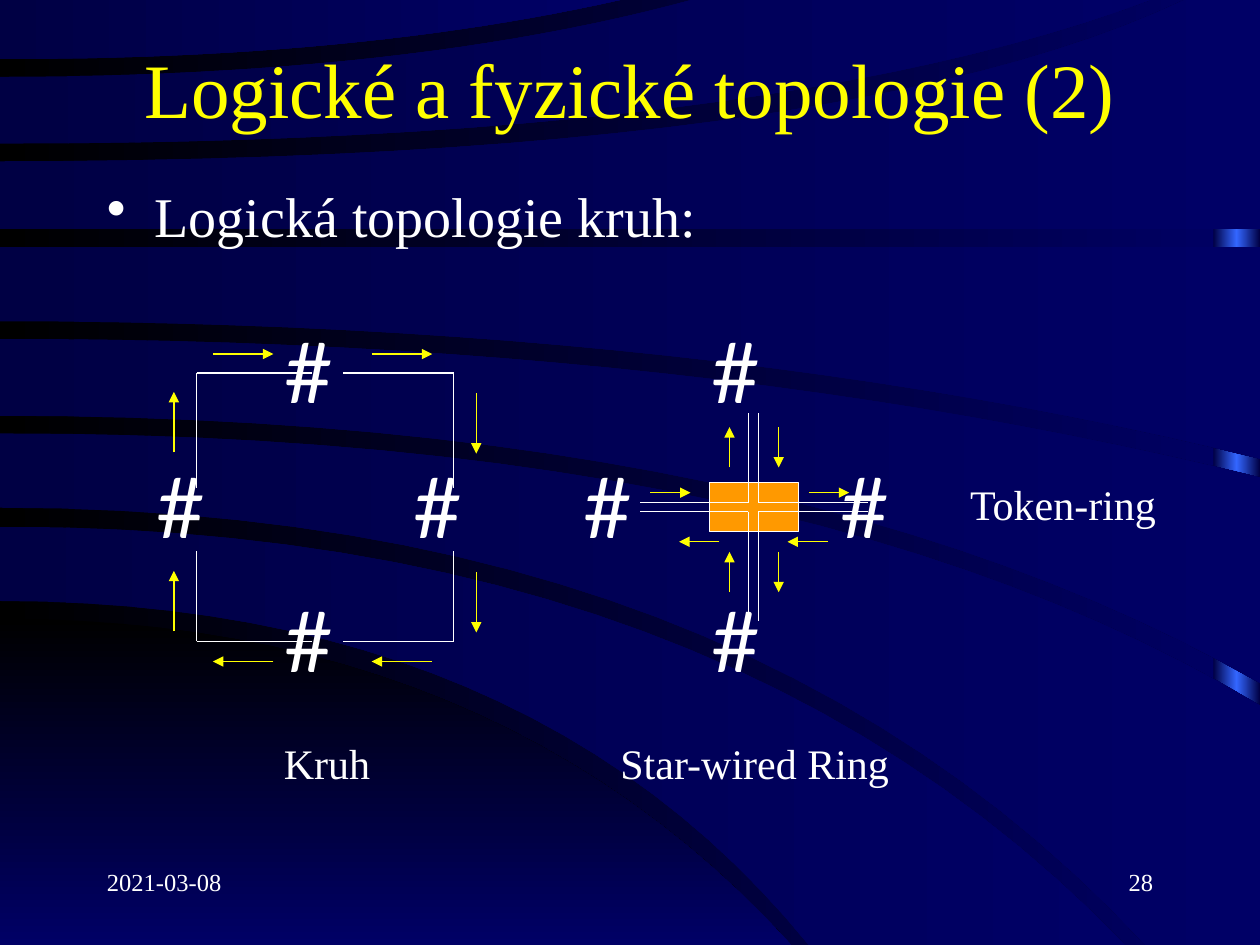
from copy import deepcopy
from dataclasses import dataclass
from itertools import product
from typing import NamedTuple

from lxml import etree
from pptx import Presentation
from pptx.dml.color import RGBColor
from pptx.enum import shapes as sh, text as tx
from pptx.oxml.ns import qn
from pptx.util import Inches, Pt


@dataclass(frozen=True)
class Theme:
    black: str = "000000"
    navy: str = "000044"
    blue: str = "000066"
    glow: str = "3366FF"
    white: str = "FFFFFF"
    yellow: str = "FFFF00"
    orange: str = "FF9900"
    serif: str = "Times New Roman"
    sans: str = "Lato"
    title: int = 44
    body: int = 32
    node: int = 48
    label: int = 24
    foot: int = 14
    line: float = 0.75


T = Theme()
WIDE, HIGH = 10, 7.5


class Box(NamedTuple):
    x: float
    y: float
    w: float
    h: float


class Label(NamedTuple):
    text: str
    box: Box
    size: int
    align: str = "LEFT"
    font: str = T.serif


class Arrow(NamedTuple):
    x: float
    y: float
    dx: float
    dy: float


class Edge(NamedTuple):
    """A curve that leaves the left side level at start and bends to (x, y)."""
    start: float
    bend: float
    x: float
    y: float

    def trace(self, steps: int = 24) -> list:
        spots = [i / steps for i in range(steps + 1)]
        return [(2 * t * (1 - t) * self.bend + t * t * self.x,
                 self.start + t * t * (self.y - self.start)) for t in spots]


class Band(NamedTuple):
    upper: Edge
    lower: Edge
    corner: tuple = ()
    ends: tuple = (T.navy, T.blue)
    angle: int = 0


def flat(y: float, x: float = WIDE) -> Edge:
    return Edge(y, x / 2, x, y)


# Background bands, from back to front
BANDS = [
    Band(Edge(4.91, 3.93, 6.28, HIGH), flat(HIGH, 6.28), ends=(T.black, T.blue), angle=270),
    Band(Edge(4.18, 5.74, 8.93, HIGH), Edge(4.77, 4.2, 6.42, HIGH)),
    Band(Edge(3.44, 6.4, WIDE, 5.6), Edge(4.03, 5.88, 9.09, HIGH), ((WIDE, HIGH),)),
    Band(Edge(2.69, 5.54, WIDE, 3.79), Edge(3.3, 6.28, WIDE, 5.42)),
    Band(flat(1.96), Edge(2.55, 5.6, WIDE, 3.64)),
    Band(Edge(1.28, 6.7, 9.4, 0), flat(1.82), ((WIDE, 0),)),
    Band(Edge(0.61, 3.25, 5.49, 0), Edge(1.14, 6.1, 9.13, 0)),
    Band(flat(0, 4.92), Edge(0.47, 2.84, 4.92, 0)),
]

LABELS = [
    Label("2021-03-08", Box(0.75, 6.83, 2.08, 0.5), T.foot),
    Label("28", Box(7.17, 6.83, 2.08, 0.5), T.foot, "RIGHT"),
    Label("Token-ring", Box(7.6, 3.75, 1.81, 0.55), T.label),
    Label("Kruh", Box(1.69, 5.8, 1.81, 0.55), T.label, "CENTER"),
    Label("Star-wired Ring", Box(4.69, 5.8, 2.6, 0.55), T.label, "CENTER"),
]
for left in (1.14, 4.53):
    LABELS += [Label("#", Box(left + dx, y, 0.87, 0.9), T.node, font=T.sans)
               for dx, y in ((1.02, 2.49), (1.02, 4.62), (0, 3.56), (2.04, 3.56))]

RING, STAR = 0.48, 0.32  # arrow lengths
ARROWS = (
    [Arrow(x, 2.81, RING, 0) for x in (1.69, 2.95)]
    + [Arrow(x, 5.25, -RING, 0) for x in (2.17, 3.43)]
    + [Arrow(3.78, y, 0, RING) for y in (3.12, 4.54)]
    + [Arrow(1.38, y, 0, -RING) for y in (3.59, 5.01)]
    + [Arrow(x, 3.91, STAR, 0) for x in (5.16, 6.42)]
    + [Arrow(x, 4.3, -STAR, 0) for x in (5.71, 6.57)]
    + [Arrow(6.18, y, 0, STAR) for y in (3.39, 4.38)]
    + [Arrow(5.79, y, 0, -STAR) for y in (3.71, 4.7)]
)


def rgb(code: str) -> RGBColor:
    return RGBColor.from_string(code)


def blend(fill, codes: tuple, angle: int = 0) -> None:
    """Fill with evenly spaced gradient stops."""
    fill.gradient()
    fill.gradient_angle = angle
    stops = fill._fill._gradFill.find(qn("a:gsLst"))
    for _ in codes[2:]:
        stops.append(deepcopy(stops[-1]))
    for i, (stop, code) in enumerate(zip(fill.gradient_stops, codes)):
        stop.position = i / (len(codes) - 1)
        stop.color.rgb = rgb(code)


def write(shape, words: str, *, size: int, color: str = T.white, font: str = T.serif,
          align: str = "LEFT", anchor: str = "TOP"):
    frame = shape.text_frame
    frame.word_wrap = True
    frame.auto_size = tx.MSO_AUTO_SIZE.NONE
    frame.vertical_anchor = tx.MSO_ANCHOR[anchor]
    para = frame.paragraphs[0]
    para.alignment = tx.PP_ALIGN[align]
    run = para.add_run()
    run.text = words
    run.font.size, run.font.name = Pt(size), font
    run.font.color.rgb = rgb(color)
    return para


def add_text(slide, item: Label):
    shape = slide.shapes.add_textbox(*map(Inches, item.box))
    return write(shape, item.text, size=item.size, align=item.align, font=item.font)


def add_rect(slide, box: Box):
    shape = slide.shapes.add_shape(sh.MSO_SHAPE.RECTANGLE, *map(Inches, box))
    shape.shadow.inherit = False
    return shape


def add_band(slide, band: Band) -> None:
    path = [*band.upper.trace(), *band.corner, *reversed(band.lower.trace())]
    first, *rest = [tuple(map(Inches, p)) for p in path]
    pen = slide.shapes.build_freeform(*first)
    pen.add_line_segments(rest, close=True)
    shape = pen.convert_to_shape()
    shape.shadow.inherit = False
    shape.line.fill.background()
    blend(shape.fill, band.ends, band.angle)


def add_line(slide, x: float, y: float, dx: float, dy: float, color: str = T.white,
             head: bool = False) -> None:
    ends = map(Inches, (x, y, x + dx, y + dy))
    line = slide.shapes.add_connector(sh.MSO_CONNECTOR.STRAIGHT, *ends)
    line.line.width = Pt(T.line)
    line.line.color.rgb = rgb(color)
    props = line._element.spPr
    if head:
        etree.SubElement(props.find(qn("a:ln")), qn("a:tailEnd"), type="triangle")
    etree.SubElement(props, qn("a:effectLst"))


def add_wires(slide, cols: tuple, rows: tuple) -> None:
    """Draw a corner at each (x, y), with arms reaching to the paired ends."""
    for (x, far_x), (y, far_y) in product(cols, rows):
        add_line(slide, x, y, far_x - x, 0)
        add_line(slide, x, y, 0, far_y - y)


def main() -> None:
    deck = Presentation()
    deck.slide_width, deck.slide_height = Inches(WIDE), Inches(HIGH)
    slide = deck.slides.add_slide(deck.slide_layouts[5])
    blend(slide.background.fill, (T.black, T.blue))

    strip = add_rect(slide, Box(9.63, 0, 0.37, HIGH))
    strip.line.fill.background()
    blend(strip.fill, (T.navy, T.glow, T.navy))
    for band in BANDS:
        add_band(slide, band)

    title = slide.shapes.title
    title.left, title.top, title.width, title.height = map(Inches, (0.75, 0.21, 8.5, 0.97))
    slide.shapes._spTree.append(title._element)
    write(title, "Logické a fyzické topologie (2)", size=T.title, color=T.yellow,
          align="CENTER", anchor="MIDDLE")

    point = add_text(slide, Label("Logická topologie kruh:", Box(0.75, 1.39, 8.5, 0.79), T.body))
    point.space_before = Pt(0.2 * T.body)
    props = point._p.get_or_add_pPr()
    props.set("marL", str(Inches(0.38)))
    props.set("indent", str(Inches(-0.38)))
    etree.SubElement(props, qn("a:buChar"), char="•")

    for item in LABELS:
        add_text(slide, item)
    hub = add_rect(slide, Box(5.63, 3.83, 0.71, 0.39))
    hub.fill.solid()
    hub.fill.fore_color.rgb = rgb(T.orange)
    hub.line.color.rgb = rgb(T.white)
    hub.line.width = Pt(T.line)

    add_wires(slide, ((1.56, 2.48), (3.6, 2.72)), ((2.96, 3.87), (5.09, 4.37)))
    add_wires(slide, ((5.94, 5.08), (6.02, 6.89)), ((3.99, 3.28), (4.06, 4.93)))
    for arrow in ARROWS:
        add_line(slide, *arrow, color=T.yellow, head=True)
    deck.save("out.pptx")


if __name__ == "__main__":
    main()
